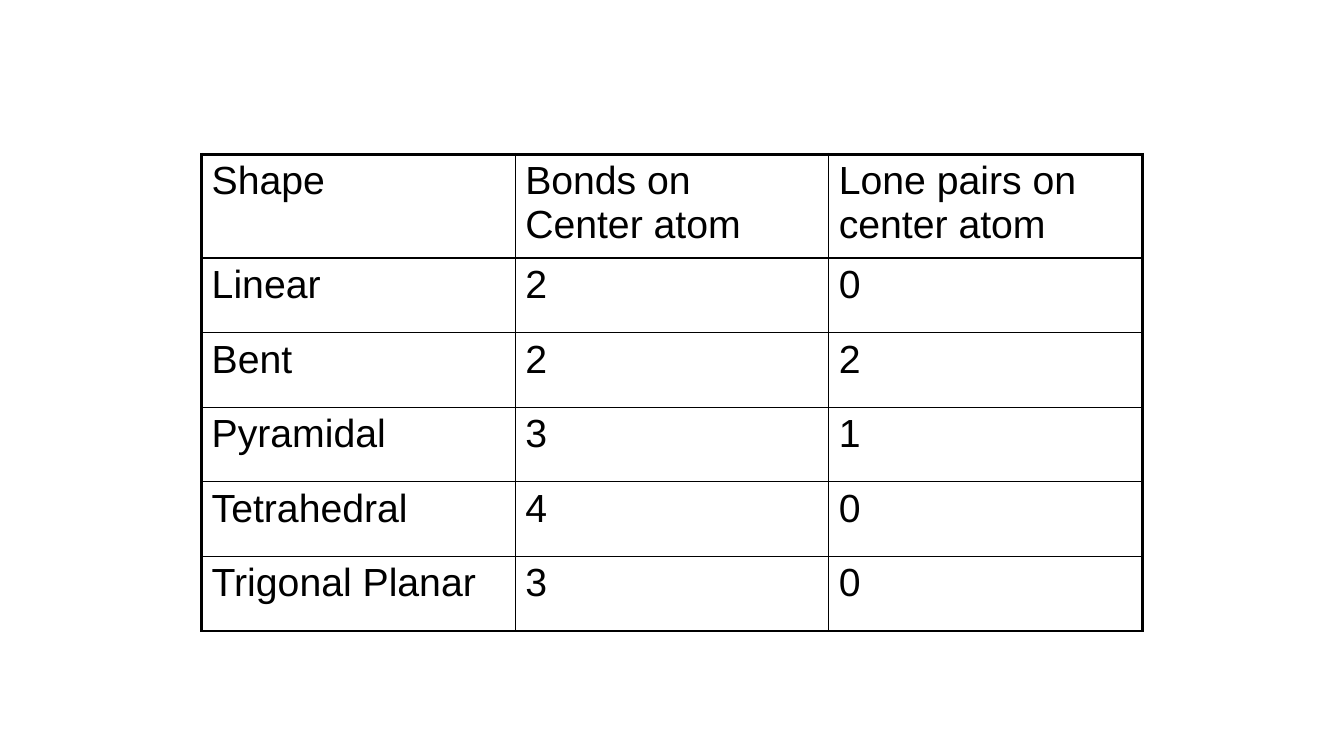
import pptx
import pptx.dml.color
import pptx.oxml
import pptx.oxml.ns
import pptx.util
from pptx.util import Inches

COLORS = {"text": "000000", "border": "000000"}
ROWS = [
    ("Shape", "Bonds on Center atom", "Lone pairs on center atom"),
    ("Linear", "2", "0"),
    ("Bent", "2", "2"),
    ("Pyramidal", "3", "1"),
    ("Tetrahedral", "4", "0"),
    ("Trigonal Planar", "3", "0"),
]
LEFT, TOP = 2, 1.53
COLUMN_WIDTH = 3.11
HEADER_HEIGHT, BODY_HEIGHT = 1.03, 0.74
OUTER_LINE, INNER_LINE = 2.25, 1


def write_text(cell, text, *, size, font, color):
    cell.margin_left = cell.margin_right = Inches(0.1)
    cell.margin_top = cell.margin_bottom = Inches(0.05)
    run = cell.text_frame.paragraphs[0].add_run()
    run.text = text
    run.font.size = pptx.util.Pt(size)
    run.font.name = font
    run.font.bold = False
    run.font.color.rgb = pptx.dml.color.RGBColor.from_string(color)


def set_borders(cell, widths):
    properties = cell._tc.get_or_add_tcPr()
    for position, (side, width) in enumerate(widths.items()):
        border = pptx.oxml.parse_xml(
            f'<a:{side} {pptx.oxml.ns.nsdecls("a")} w="{pptx.util.Pt(width)}">'
            f'<a:solidFill><a:srgbClr val="{COLORS["border"]}"/></a:solidFill>'
            f'</a:{side}>'
        )
        properties.insert(position, border)


def build_table(slide):
    row_count, column_count = len(ROWS), len(ROWS[0])
    heights = [HEADER_HEIGHT] + [BODY_HEIGHT] * (row_count - 1)
    table = slide.shapes.add_table(
        row_count, column_count, Inches(LEFT), Inches(TOP),
        Inches(COLUMN_WIDTH * column_count), Inches(sum(heights)),
    ).table
    table.first_row = False
    table.horz_banding = False
    for column in table.columns:
        column.width = Inches(COLUMN_WIDTH)
    for row_index, (values, height) in enumerate(zip(ROWS, heights)):
        table.rows[row_index].height = Inches(height)
        for column_index, value in enumerate(values):
            cell = table.cell(row_index, column_index)
            write_text(cell, value, size=28, font="Arial", color=COLORS["text"])
            cell.fill.background()
            outer_sides = {
                "lnL": column_index == 0,
                "lnR": column_index == column_count - 1,
                "lnT": row_index == 0,
                "lnB": row_index == row_count - 1,
            }
            set_borders(cell, {
                side: OUTER_LINE if outer else INNER_LINE
                for side, outer in outer_sides.items()
            })


def main():
    presentation = pptx.Presentation()
    presentation.slide_width = Inches(13.33)
    presentation.slide_height = Inches(7.5)
    slide = presentation.slides.add_slide(presentation.slide_layouts[6])
    build_table(slide)
    presentation.save("out.pptx")


if __name__ == "__main__":
    main()
